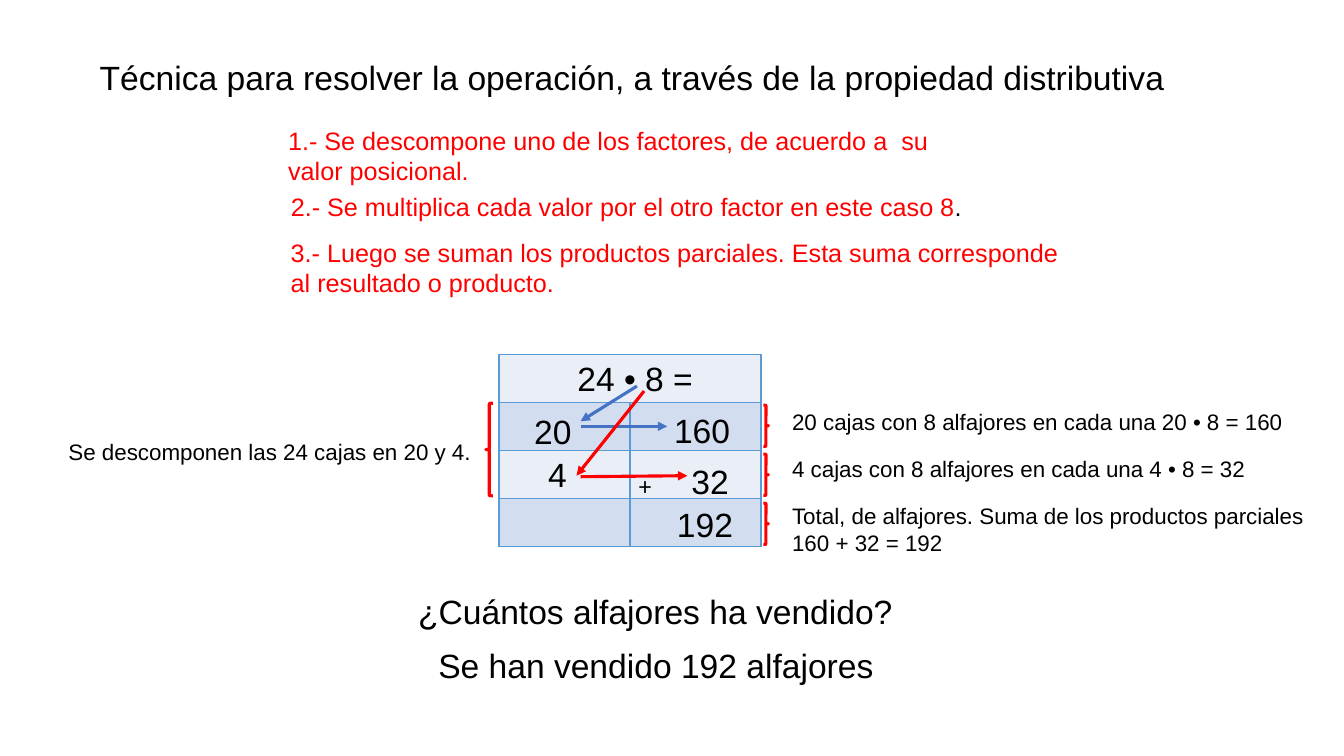
from lxml import etree
from pptx import Presentation
from pptx.dml.color import RGBColor
from pptx.enum.shapes import MSO_CONNECTOR as CONN, MSO_SHAPE as SHAPE
from pptx.enum.text import MSO_ANCHOR as ANCHOR, PP_ALIGN as ALIGN
from pptx.oxml import parse_xml
from pptx.oxml.ns import nsdecls, qn
from pptx.util import Pt

BLACK, WHITE, RED, BLUE = "000000", "FFFFFF", "FF0000", "4472C4"
BORDER, BANDS = "5B9BD5", ("EAEFF7", "D2DEEF")
BRACE_PITCH, NOTE_PITCH = 35, 33.5


def rgb(color):
    return RGBColor.from_string(color)


def write(tf, lines, size, color=BLACK, align=ALIGN.LEFT, spacing=1.0, font="Arial"):
    for i, line in enumerate(lines):
        p = tf.paragraphs[0] if i == 0 else tf.add_paragraph()
        p.text = line
        p.alignment = align
        p.line_spacing = spacing
        p.font.size = Pt(size)
        p.font.name = font
        p.font.color.rgb = rgb(color)


def add_text(s, box, lines, size, wrap=True, fill=None, **style):
    sp = s.shapes.add_textbox(*map(Pt, box))
    if fill:
        sp.fill.solid()
        sp.fill.fore_color.rgb = rgb(fill)
    tf = sp.text_frame
    tf.word_wrap = wrap
    write(tf, lines, size, **style)
    return sp


def add_brace(s, x, y, w, h, rotation=0):
    sp = s.shapes.add_shape(SHAPE.RIGHT_BRACE, Pt(x), Pt(y), Pt(w), Pt(h))
    sp.shadow.inherit = False
    sp.fill.background()
    sp.line.color.rgb = rgb(RED)
    sp.line.width = Pt(2.25)
    sp.rotation = rotation


def add_arrow(s, x1, y1, x2, y2, color):
    cx = s.shapes.add_connector(CONN.STRAIGHT, Pt(x1), Pt(y1), Pt(x2), Pt(y2))
    cx.line.color.rgb = rgb(color)
    cx.line.width = Pt(2.25)
    etree.SubElement(cx.line._get_or_add_ln(), qn("a:tailEnd"), type="triangle")
    etree.SubElement(cx._element.spPr, qn("a:effectLst"))


def border_cell(cell):
    tc_pr = cell._tc.get_or_add_tcPr()
    for i, side in enumerate(("lnL", "lnR", "lnT", "lnB")):
        tc_pr.insert(i, parse_xml(
            f'<a:{side} {nsdecls("a")} w="12700"><a:solidFill>'
            f'<a:srgbClr val="{BORDER}"/></a:solidFill></a:{side}>'))


def add_title(s, x, y, w, h):
    sp = s.shapes.title
    sp.left, sp.top, sp.width, sp.height = map(Pt, (x, y, w, h))
    tf = sp.text_frame
    tf.word_wrap = True
    tf.vertical_anchor = ANCHOR.TOP
    write(tf, ["Técnica para resolver la operación, a través de la propiedad distributiva"], 24)


def add_steps(s, x, y):
    add_text(s, (x, y, 510, 51),
             ["1.- Se descompone uno de los factores, de acuerdo a  su valor posicional."],
             18, color=RED)
    sp = add_text(s, (x + 1.9, y + 47.5, 497.5, 29),
                  ["2.- Se multiplica cada valor por el otro factor en este caso 8"],
                  18, color=RED)
    r = sp.text_frame.paragraphs[0].add_run()
    r.text = "."
    r.font.color.rgb = rgb(BLACK)
    add_text(s, (x + 1.9, y + 79.9, 573, 51),
             ["3.- Luego se suman los productos parciales. Esta suma corresponde "
              "al resultado o producto."], 18, color=RED)


def add_grid(s, x, y, w, h):
    table = s.shapes.add_table(4, 2, Pt(x), Pt(y), Pt(w), Pt(h)).table
    table.first_row = table.horz_banding = False
    for i, row in enumerate(table.rows):
        for cell in row.cells:
            cell.fill.solid()
            cell.fill.fore_color.rgb = rgb(BANDS[i % 2])
            border_cell(cell)
    table.cell(0, 0).merge(table.cell(0, 1))


def add_notes(s, x, y):
    add_text(s, (x - 314.6, y + 56.2, 311, 31.7),
             ["Se descomponen las 24 cajas en 20 y 4."], 16, fill=WHITE)
    notes = [
        (371, 26, ["20 cajas con 8 alfajores en cada una 20 • 8 = 160"]),
        (343, 26, ["4 cajas con 8 alfajores en cada una 4 • 8 = 32"]),
        (390, 51, ["Total, de alfajores. Suma de los productos parciales", "160 + 32 = 192"]),
    ]
    for i, (w, h, lines) in enumerate(notes):
        add_text(s, (x + 202.3, y + 34.6 + i * NOTE_PITCH, w, h), lines, 16, fill=WHITE)
        add_brace(s, x + 188.9, y + 36 + i * BRACE_PITCH, 3.6, 29.5)
    add_brace(s, x - 9.4, y + 34.6, 5, 66.2, 180)


def add_arrows(s, x, y):
    for x1, y1, x2, y2, color in (
        (98.6, 22.4, 58.3, 47.5, BLUE),
        (58.3, 51.1, 120.2, 51.1, BLUE),
        (103.7, 25.9, 55.4, 86.4, RED),
        (58.3, 87.1, 134.6, 86.4, RED),
    ):
        add_arrow(s, x + x1, y + y1, x + x2, y + y2, color)


def add_numbers(s, x, y):
    add_text(s, (x + 92.9, y + 79.2, 20.9, 28.8), ["+"], 18, font="Calibri")
    for dx, dy, w, text in (
        (35.3, -3.6, 124, "24 • 8 ="),
        (10.8, 34.6, 55.4, "20"),
        (27.4, 65.5, 28.8, "4"),
        (117.4, 33.9, 55.4, "160"),
        (123.1, 70.6, 55.4, "32"),
        (119.5, 100.8, 55.4, "192"),
    ):
        add_text(s, (x + dx, y + dy, w, 36), [text], 24, align=ALIGN.CENTER, spacing=1.07)


def add_multiplication(s, x, y, w, h):
    add_grid(s, x, y, w, h)
    add_notes(s, x, y)
    add_arrows(s, x, y)
    add_numbers(s, x, y)


def add_answer(s, x, y, w):
    add_text(s, (x, y, w, 36), ["¿Cuántos alfajores ha vendido?"], 24, wrap=False)
    add_text(s, (x + 14.4, y + 38.9, w - 28.1, 36), ["Se han vendido 192 alfajores"],
             24, wrap=False)


def main():
    prs = Presentation()
    prs.slide_width, prs.slide_height = Pt(960), Pt(540)
    s = prs.slides.add_slide(prs.slide_layouts[5])
    add_title(s, 64, 37.4, 792, 36)
    add_multiplication(s, 356.4, 253.4, 187.2, 136.8)
    add_steps(s, 198.7, 85.7)
    add_answer(s, 291.6, 418.3, 357.1)
    prs.save("out.pptx")


if __name__ == "__main__":
    main()
